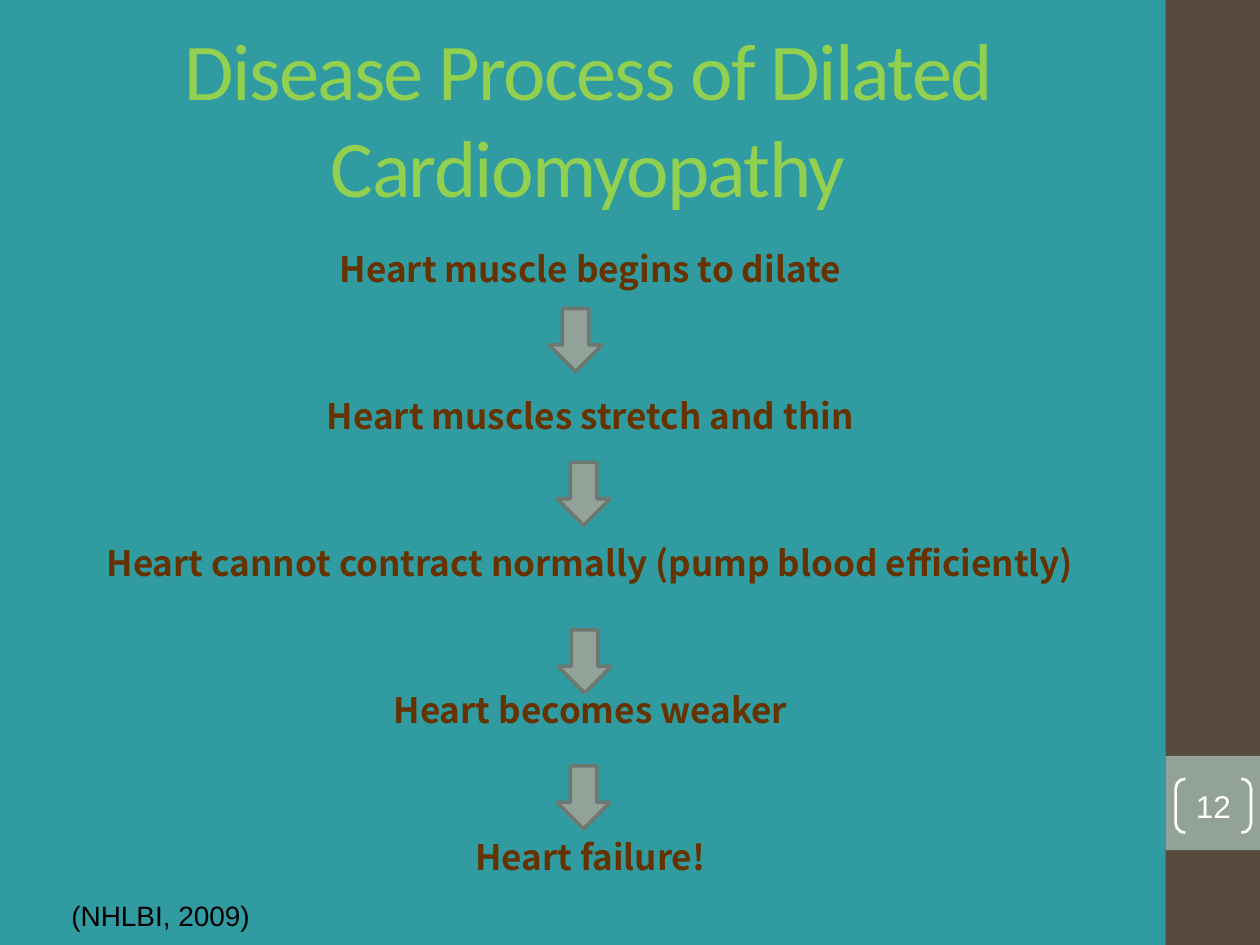
from pptx import Presentation
from pptx.dml.color import RGBColor
from pptx.enum.shapes import MSO_SHAPE
from pptx.enum.text import MSO_ANCHOR, MSO_AUTO_SIZE, PP_ALIGN
from pptx.util import Cm, Pt

TEAL = RGBColor(0x30, 0x9B, 0xA0)
BROWN = RGBColor(0x56, 0x4B, 0x3C)
SAGE = RGBColor(0x93, 0xA2, 0x99)
DARK_SAGE = RGBColor(0x6D, 0x78, 0x71)
LIME = RGBColor(0x92, 0xD0, 0x50)
RUST = RGBColor(0x66, 0x33, 0x00)
WHITE = RGBColor(0xFF, 0xFF, 0xFF)
BLACK = RGBColor(0x00, 0x00, 0x00)

TITLE = "Disease Process of Dilated Cardiomyopathy"
STEPS = [
    "Heart muscle begins to dilate",
    "Heart muscles stretch and thin",
    "Heart cannot contract normally (pump blood efficiently)",
    "Heart becomes weaker",
    "Heart failure!",
]
CITATION = "(NHLBI, 2009)"
PAGE_NUMBER = "12"

TITLE_BOX = (1.27, 0.76, 21.16, 3.18)
STEPS_BOX = (1.17, 4.8, 21.16, 13.34)
CITATION_BOX = (1.19, 17.98, 4.52, 0.94)
SIDEBAR_BOX = (23.5, 0, 1.9, 19.05)
BADGE_BOX = (23.5, 15.24, 1.9, 1.9)
BRACKET_BOX = (23.7, 15.7, 1.52, 1.09)
ARROW_SIZE = (1.07, 1.27)
ARROW_CORNERS = [(11.07, 6.22), (11.23, 9.32), (11.25, 12.7), (11.23, 15.44)]

TITLE_FONT = {"name": "Calibri", "size": Pt(46), "bold": False}
STEP_FONT = {"name": "Noto Sans CJK KR", "size": Pt(20), "bold": True}
PAGE_FONT = {"name": "Arial", "size": Pt(18)}
CITATION_FONT = {"name": "Arial", "size": Pt(16)}
CENTERED = {"alignment": PP_ALIGN.CENTER}
STEP_SPACING = {**CENTERED, "line_spacing": Pt(26),
                "space_before": Pt(0), "space_after": Pt(58)}
TITLE_FRAME = {"vertical_anchor": MSO_ANCHOR.MIDDLE, "word_wrap": True,
               "auto_size": MSO_AUTO_SIZE.NONE}
STEPS_FRAME = {**TITLE_FRAME, "vertical_anchor": MSO_ANCHOR.TOP}
PAGE_FRAME = {"vertical_anchor": MSO_ANCHOR.MIDDLE, "margin_left": 0,
              "margin_right": 0, "margin_top": 0, "margin_bottom": 0}


def apply(target, values):
    for name, value in values.items():
        setattr(target, name, value)


def place(shape, box):
    apply(shape, dict(zip(("left", "top", "width", "height"), map(Cm, box))))


def write(shape, lines, font, color, frame, spacing):
    text_frame = shape.text_frame
    apply(text_frame, frame)
    text_frame.text = "\n".join(lines)
    for paragraph in text_frame.paragraphs:
        apply(paragraph, spacing)
        run = paragraph.runs[0]
        apply(run.font, font)
        run.font.color.rgb = color


def add_shape(slide, kind, box, fill=None, line=None, width=0):
    shape = slide.shapes.add_shape(kind, *map(Cm, box))
    shape.shadow.inherit = False
    if fill is None:
        shape.fill.background()
    else:
        shape.fill.solid()
        shape.fill.fore_color.rgb = fill
    if line is None:
        shape.line.fill.background()
    else:
        shape.line.color.rgb = line
        shape.line.width = Pt(width)
    return shape


def main():
    presentation = Presentation()
    presentation.slide_width, presentation.slide_height = Cm(25.4), Cm(19.05)
    slide = presentation.slides.add_slide(presentation.slide_layouts[1])
    slide.background.fill.solid()
    slide.background.fill.fore_color.rgb = TEAL

    add_shape(slide, MSO_SHAPE.RECTANGLE, SIDEBAR_BOX, BROWN)
    add_shape(slide, MSO_SHAPE.RECTANGLE, BADGE_BOX, SAGE)

    title = slide.shapes.title
    place(title, TITLE_BOX)
    write(title, [TITLE], TITLE_FONT, LIME, TITLE_FRAME, CENTERED)
    title.text_frame.paragraphs[0].runs[0].font._element.set("spc", "-100")

    body = slide.placeholders[1]
    place(body, STEPS_BOX)
    write(body, STEPS, STEP_FONT, RUST, STEPS_FRAME, STEP_SPACING)
    for paragraph in body.text_frame.paragraphs:
        properties = paragraph._p.get_or_add_pPr()
        properties.set("marL", str(Cm(0.3)))
        properties.set("indent", "0")
        properties.append(properties.makeelement(
            "{http://schemas.openxmlformats.org/drawingml/2006/main}buNone", {}))

    bracket = add_shape(slide, MSO_SHAPE.DOUBLE_BRACKET, BRACKET_BOX, None, WHITE, 1.5)
    bracket.adjustments[0] = 0.18
    write(bracket, [PAGE_NUMBER], PAGE_FONT, WHITE, PAGE_FRAME, CENTERED)

    citation = slide.shapes.add_textbox(*map(Cm, CITATION_BOX))
    write(citation, [CITATION], CITATION_FONT, BLACK, {"word_wrap": True}, {})

    for corner in ARROW_CORNERS:
        add_shape(slide, MSO_SHAPE.DOWN_ARROW, corner + ARROW_SIZE, SAGE, DARK_SAGE, 2)

    presentation.save("out.pptx")


if __name__ == "__main__":
    main()
